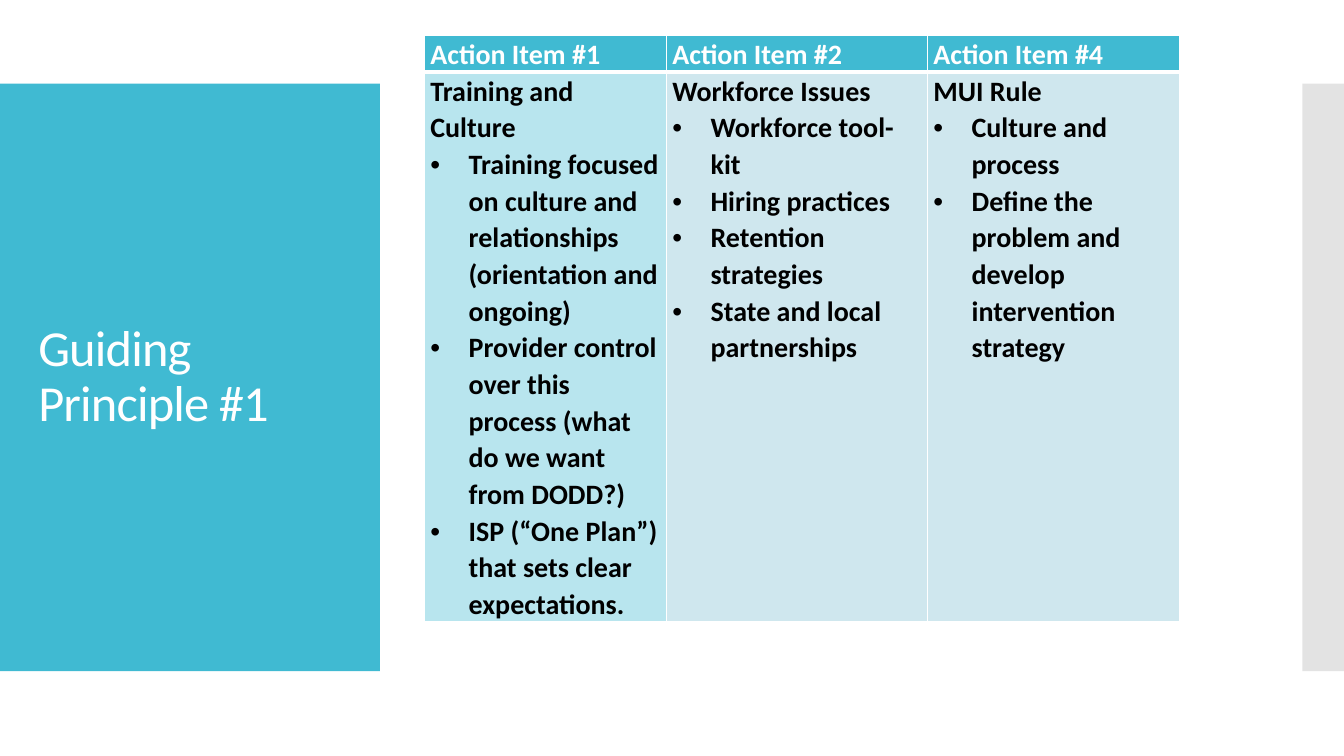
"""Build the Guiding Principle #1 slide with its action item table."""
from lxml.etree import SubElement
from pptx import Presentation
from pptx.dml.color import RGBColor
from pptx.enum.shapes import MSO_SHAPE
from pptx.enum.text import MSO_ANCHOR, MSO_AUTO_SIZE, PP_ALIGN
from pptx.oxml import parse_xml
from pptx.oxml.ns import nsdecls, qn
from pptx.util import Pt

PX = 9144
TEAL, WHITE, BLACK = "40BAD2", "FFFFFF", "000000"
ITEMS = [
    ("Action Item #1", "B8E5EE", 240, [
        "Training and Culture",
        "Training focused on culture and relationships (orientation and ongoing)",
        "Provider control over this process (what do we want from DODD?)",
        "ISP (“One Plan”) that sets clear expectations."]),
    ("Action Item #2", "CFE7EE", 259, [
        "Workforce Issues", "Workforce tool-kit", "Hiring practices",
        "Retention strategies", "State and local partnerships"]),
    ("Action Item #4", "CFE7EE", 250, [
        "MUI Rule", "Culture and process",
        "Define the problem and develop intervention strategy"]),
]


def paint(fill, color):
    fill.solid()
    fill.fore_color.rgb = RGBColor.from_string(color)


def style(para, size, color, bold, spacing):
    para.line_spacing = spacing
    for span in para.runs:
        span.font.name = "Calibri"
        span.font.size = Pt(size)
        span.font.bold = bold
        paint(span.font.fill, color)


deck = Presentation()
deck.slide_width, deck.slide_height = 12192000, 750 * PX
page = deck.slides.add_slide(deck.slide_layouts[5])
title = page.shapes.title

for left, width, color in ((0, 377, TEAL), (1292, 42, "C8C8C8")):
    panel = page.shapes.add_shape(
        MSO_SHAPE.RECTANGLE, left * PX, 83 * PX, width * PX, 583 * PX)
    panel.shadow.inherit = False
    paint(panel.fill, color)
    panel.line.fill.background()
tint = panel.fill._xPr.find(qn("a:solidFill"))[0]
SubElement(tint, qn("a:alpha"), val="50000")

title.element.getparent().append(title.element)
title.left, title.top, title.width, title.height = (
    28 * PX, 123 * PX, 322 * PX, 503 * PX)
title.text_frame.text = "Guiding Principle #1"
title.text_frame.word_wrap = True
title.text_frame.auto_size = MSO_AUTO_SIZE.NONE
title.text_frame.vertical_anchor = MSO_ANCHOR.MIDDLE
heading = title.text_frame.paragraphs[0]
heading.alignment = PP_ALIGN.LEFT
style(heading, 36, WHITE, False, 0.9)
heading.runs[0].font._element.set("spc", "-60")

frame = page.shapes.add_table(2, len(ITEMS), 421 * PX, 35 * PX, 749 * PX, 603 * PX)
table = frame.table
for row, height in zip(table.rows, (16, 80)):
    row.height = height * PX
for index, (label, tint, width, lines) in enumerate(ITEMS):
    table.columns[index].width = width * PX
    rows = ((label, TEAL, WHITE, 3), ("\n".join(lines), tint, BLACK, 1))
    for row_index, (text, fill, color, bottom) in enumerate(rows):
        cell = table.cell(row_index, index)
        cell.text_frame.text = text
        cell.margin_left = cell.margin_right = 6 * PX
        cell.margin_top = cell.margin_bottom = 0
        paint(cell.fill, fill)
        top = 1 if row_index == 0 else 3
        borders = (("L", 1), ("R", 1), ("T", top), ("B", bottom))
        for place, (side, points) in enumerate(borders):
            cell._tc.tcPr.insert(place, parse_xml(
                f'<a:ln{side} {nsdecls("a")} w="{Pt(points)}"><a:solidFill>'
                f'<a:srgbClr val="{WHITE}"/></a:solidFill></a:ln{side}>'))
        for number, para in enumerate(cell.text_frame.paragraphs):
            style(para, 20, color, True, 1.07)
            if number:
                properties = para._p.get_or_add_pPr()
                properties.set("marL", str(38 * PX))
                properties.set("indent", str(-38 * PX))
                SubElement(properties, qn("a:buFont"), typeface="Arial")
                SubElement(properties, qn("a:buChar"), char="•")

deck.save("out.pptx")
